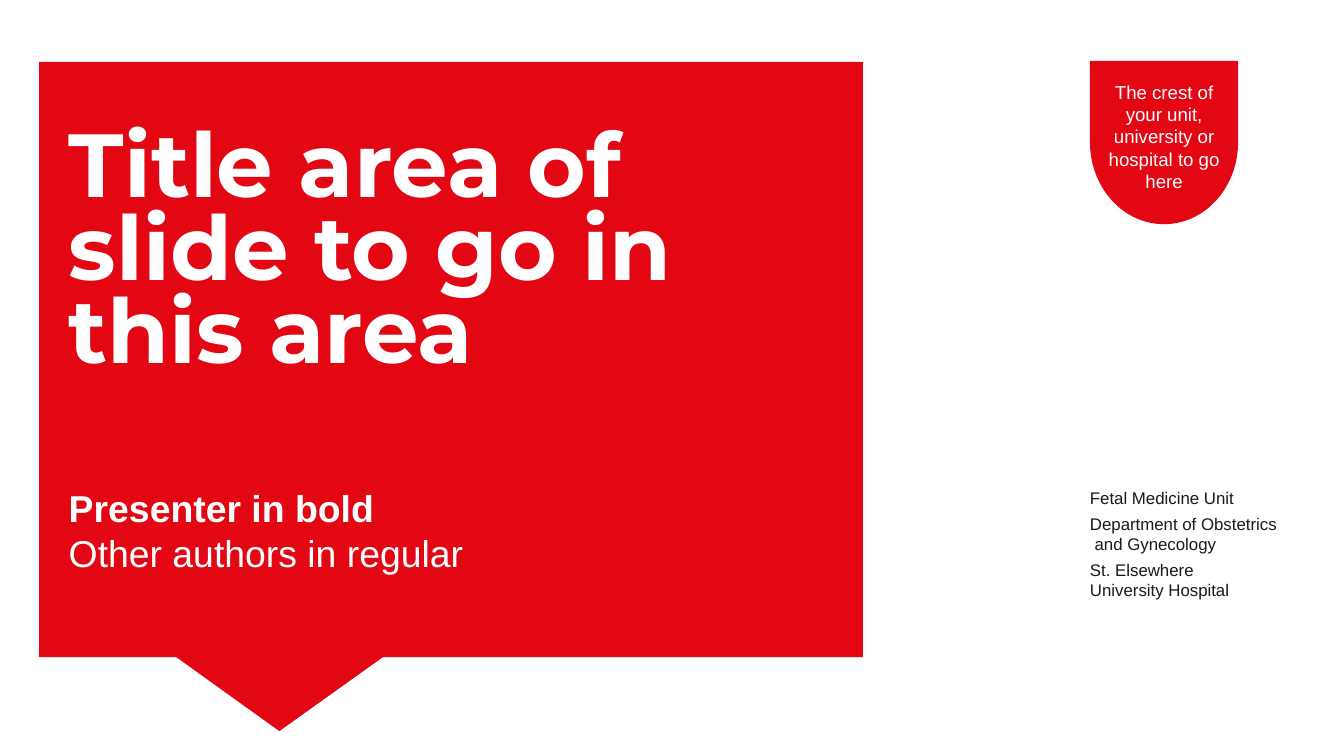
from math import cos, pi, sin

from pptx import Presentation
from pptx.dml.color import RGBColor
from pptx.enum.text import PP_ALIGN
from pptx.util import Cm, Pt

RED, WHITE, BLACK = "E30613", "FFFFFF", "1A1918"

deck = Presentation()
deck.slide_width, deck.slide_height = Cm(25.4), Cm(14.29)
slide = deck.slides.add_slide(deck.slide_layouts[6])


def add_red_outline(*contours):
    """Draw closed contours, given as points in cm, as one red shape."""
    builder = None
    for contour in contours:
        start, *others = [(Cm(x), Cm(y)) for x, y in contour]
        if builder is None:
            builder = slide.shapes.build_freeform(*start)
        else:
            builder.move_to(*start)
        builder.add_line_segments(others, close=True)
    outline = builder.convert_to_shape()
    outline.shadow.inherit = False
    outline.fill.solid()
    outline.fill.fore_color.rgb = RGBColor.from_string(RED)
    outline.line.fill.background()


def add_text(left, top, width, height, paragraphs, color, font="Arial",
             align=PP_ALIGN.LEFT):
    """Each paragraph is (lines, size, bold, space before in points)."""
    frame = slide.shapes.add_textbox(Cm(left), Cm(top), Cm(width), Cm(height)).text_frame
    frame.word_wrap = True
    frame.margin_left = frame.margin_right = frame.margin_top = frame.margin_bottom = 0
    for number, (lines, size, bold, before) in enumerate(paragraphs):
        paragraph = frame.add_paragraph() if number else frame.paragraphs[0]
        paragraph.alignment = align
        paragraph.space_before = Pt(before)
        for row, line in enumerate(lines):
            if row:
                paragraph.add_line_break()
            run = paragraph.add_run()
            run.text = line
            run.font.name = font
            run.font.size = Pt(size)
            run.font.bold = bold
            run.font.color.rgb = RGBColor.from_string(color)


# Speech bubble with its tail
add_red_outline(
    [(7.24, 12.42), (3.33, 12.42), (5.28, 13.82)],
    [(16.31, 12.42), (16.31, 1.17), (0.74, 1.17), (0.74, 12.42)],
)

# Title, one box per line
title_lines = ["Title area of", "slide to go in", "this area"]
for row, line in enumerate(title_lines):
    add_text(1.3, 2.04 + 1.57 * row, 12, 2.06, [([line], 48, True, 0)],
             WHITE, font="Montserrat")

add_text(1.3, 9.17, 8.28, 1.7, [
    (["Presenter in bold"], 20, True, 0),
    (["Other authors in regular"], 20, False, 0),
], WHITE)

# Crest: straight top, half ellipse below
center, shoulder, half_width, depth = 22, 2.69, 1.4, 1.55
steps = 36
curve = [(center + half_width * cos(pi * step / steps),
          shoulder + depth * sin(pi * step / steps)) for step in range(steps + 1)]
add_red_outline([(center - half_width, 1.15), (center + half_width, 1.15), *curve])

crest_lines = ["The crest of", "your unit,", "university or", "hospital to go", "here"]
add_text(20.9, 1.52, 2.2, 2.16, [(crest_lines, 10, False, 0)], WHITE,
         align=PP_ALIGN.CENTER)

add_text(20.6, 9.22, 3.8, 2.18, [
    (["Fetal Medicine Unit"], 9, False, 0),
    (["Department of Obstetrics", " and Gynecology"], 9, False, 3),
    (["St. Elsewhere", "University Hospital"], 9, False, 3),
], BLACK)

deck.save("out.pptx")
